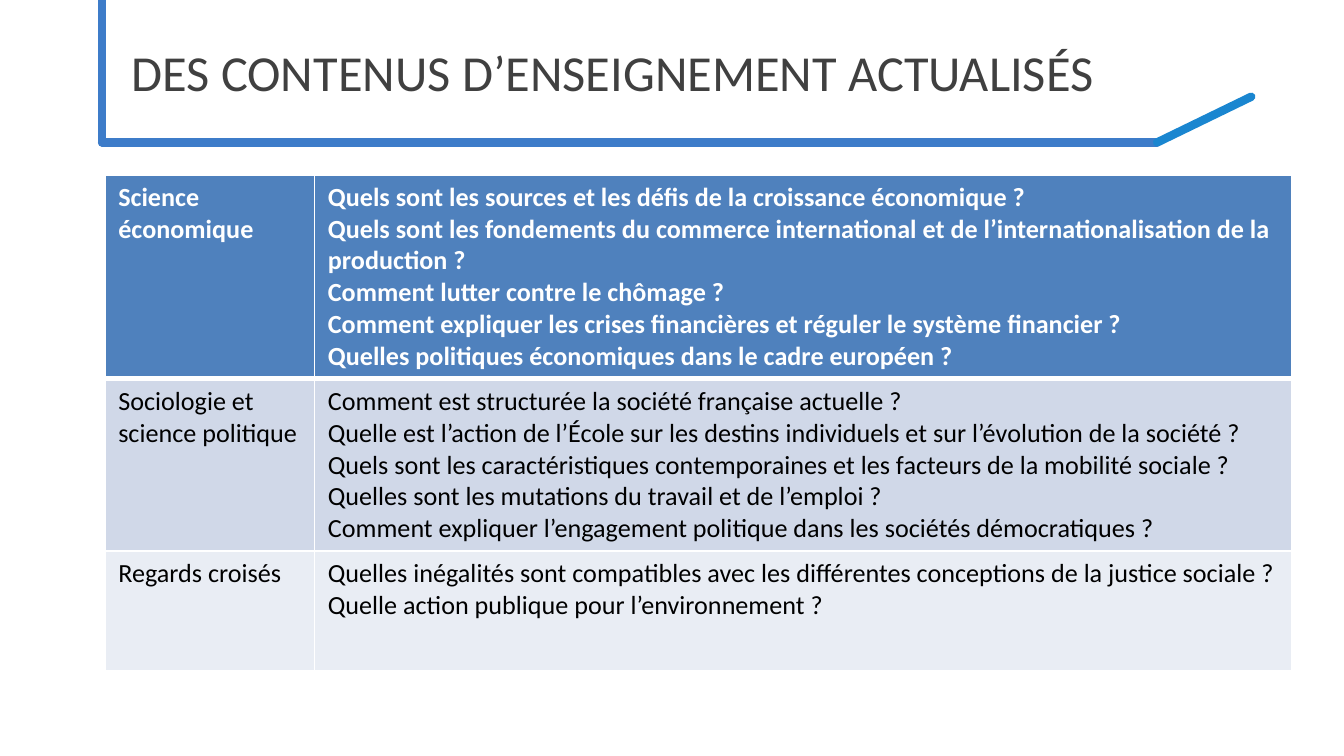
from dataclasses import dataclass

from lxml import etree
from pptx import Presentation
from pptx.dml.color import RGBColor
from pptx.enum import shapes, text
from pptx.oxml import ns
from pptx.util import Inches, Pt


@dataclass(frozen=True)
class Theme:
    font: str = "Calibri"
    title_size: float = 27
    body_size: float = 14
    rule_width: float = 4.5
    title: str = "404040"
    rule: str = "3D7CC9"
    accent: str = "1A86D0"
    border: str = "FFFFFF"


@dataclass(frozen=True)
class Rule:
    start: tuple[float, float]
    end: tuple[float, float]
    color: str


@dataclass(frozen=True)
class Topic:
    name: str
    questions: list[str]
    height: float
    fill: str
    color: str = "000000"
    header: bool = False


THEME = Theme()
CORNER, BEND = (0.76, 1.06), (8.61, 1.06)
RULES = [
    Rule(CORNER, BEND, THEME.rule),
    Rule(BEND, (9.31, 0.72), THEME.accent),
    Rule(CORNER, (0.76, 0), THEME.rule),
]
COLUMN_WIDTHS = [1.56, 7.27]
TOPICS = [
    Topic("Science économique", [
        "Quels sont les sources et les défis de la croissance économique ?",
        "Quels sont les fondements du commerce international et de l’internationalisation de la production ?",
        "Comment lutter contre le chômage ?",
        "Comment expliquer les crises financières et réguler le système financier ?",
        "Quelles politiques économiques dans le cadre européen ?",
    ], 1.52, "4F81BD", "FFFFFF", True),
    Topic("Sociologie et science politique", [
        "Comment est structurée la société française actuelle ?",
        "Quelle est l’action de l’École sur les destins individuels et sur l’évolution de la société ?",
        "Quels sont les caractéristiques contemporaines et les facteurs de la mobilité sociale ?",
        "Quelles sont les mutations du travail et de l’emploi ?",
        "Comment expliquer l’engagement politique dans les sociétés démocratiques ?",
    ], 1.28, "D0D8E8"),
    Topic("Regards croisés", [
        "Quelles inégalités sont compatibles avec les différentes conceptions de la justice sociale ?",
        "Quelle action publique pour l’environnement ?",
    ], 0.89, "E9EDF4"),
]


def format_text(frame, size: float, color: str, bold: bool = False) -> None:
    for para in frame.paragraphs:
        for span in para.runs:
            span.font.name = THEME.font
            span.font.size = Pt(size)
            span.font.bold = bold
            span.font.color.rgb = RGBColor.from_string(color)


def draw_rule(page, rule: Rule) -> None:
    line = page.shapes.add_connector(
        shapes.MSO_CONNECTOR.STRAIGHT,
        *(Inches(value) for value in rule.start + rule.end))
    line.line.color.rgb = RGBColor.from_string(rule.color)
    line.line.width = Pt(THEME.rule_width)
    line.line._get_or_add_ln().set("cap", "rnd")
    etree.SubElement(line._element.spPr, ns.qn("a:effectLst"))


def draw_title(page, wording: str) -> None:
    box = page.shapes.add_textbox(Inches(0.88), Inches(0), Inches(8.62), Inches(1.06))
    frame = box.text_frame
    frame.word_wrap = True
    frame.vertical_anchor = text.MSO_ANCHOR.MIDDLE
    frame.text = wording
    format_text(frame, THEME.title_size, THEME.title)


def set_borders(cell, top: float, bottom: float) -> None:
    properties = cell._tc.get_or_add_tcPr()
    widths = {"lnL": 1, "lnR": 1, "lnT": top, "lnB": bottom}
    for index, (side, width) in enumerate(widths.items()):
        edge = etree.Element(ns.qn(f"a:{side}"), w=str(Pt(width)))
        fill = etree.SubElement(edge, ns.qn("a:solidFill"))
        etree.SubElement(fill, ns.qn("a:srgbClr"), val=THEME.border)
        properties.insert(index, edge)


def draw_table(page, topics: list[Topic]) -> None:
    table = page.shapes.add_table(
        len(topics), len(COLUMN_WIDTHS), Inches(0.78), Inches(1.3),
        Inches(sum(COLUMN_WIDTHS)), Inches(sum(topic.height for topic in topics))).table
    for column, width in zip(table.columns, COLUMN_WIDTHS):
        column.width = Inches(width)
    top = 1
    for row, topic in zip(table.rows, topics):
        row.height = Inches(topic.height)
        bottom = 3 if topic.header else 1
        for cell, wording in zip(row.cells, [topic.name, "\n".join(topic.questions)]):
            cell.text_frame.text = wording
            format_text(cell.text_frame, THEME.body_size, topic.color, topic.header)
            cell.fill.solid()
            cell.fill.fore_color.rgb = RGBColor.from_string(topic.fill)
            set_borders(cell, top, bottom)
        top = bottom  # neighbouring rows share an edge


def main() -> None:
    # Widescreen page, 16:9
    deck = Presentation()
    deck.slide_width = Inches(10)
    deck.slide_height = deck.slide_width * 9 // 16
    page = deck.slides.add_slide(deck.slide_layouts[6])

    # Title and its frame
    for rule in RULES:
        draw_rule(page, rule)
    draw_title(page, "DES CONTENUS D’ENSEIGNEMENT ACTUALISÉS")

    # Topics and their questions
    draw_table(page, TOPICS)
    deck.save("out.pptx")


if __name__ == "__main__":
    main()
